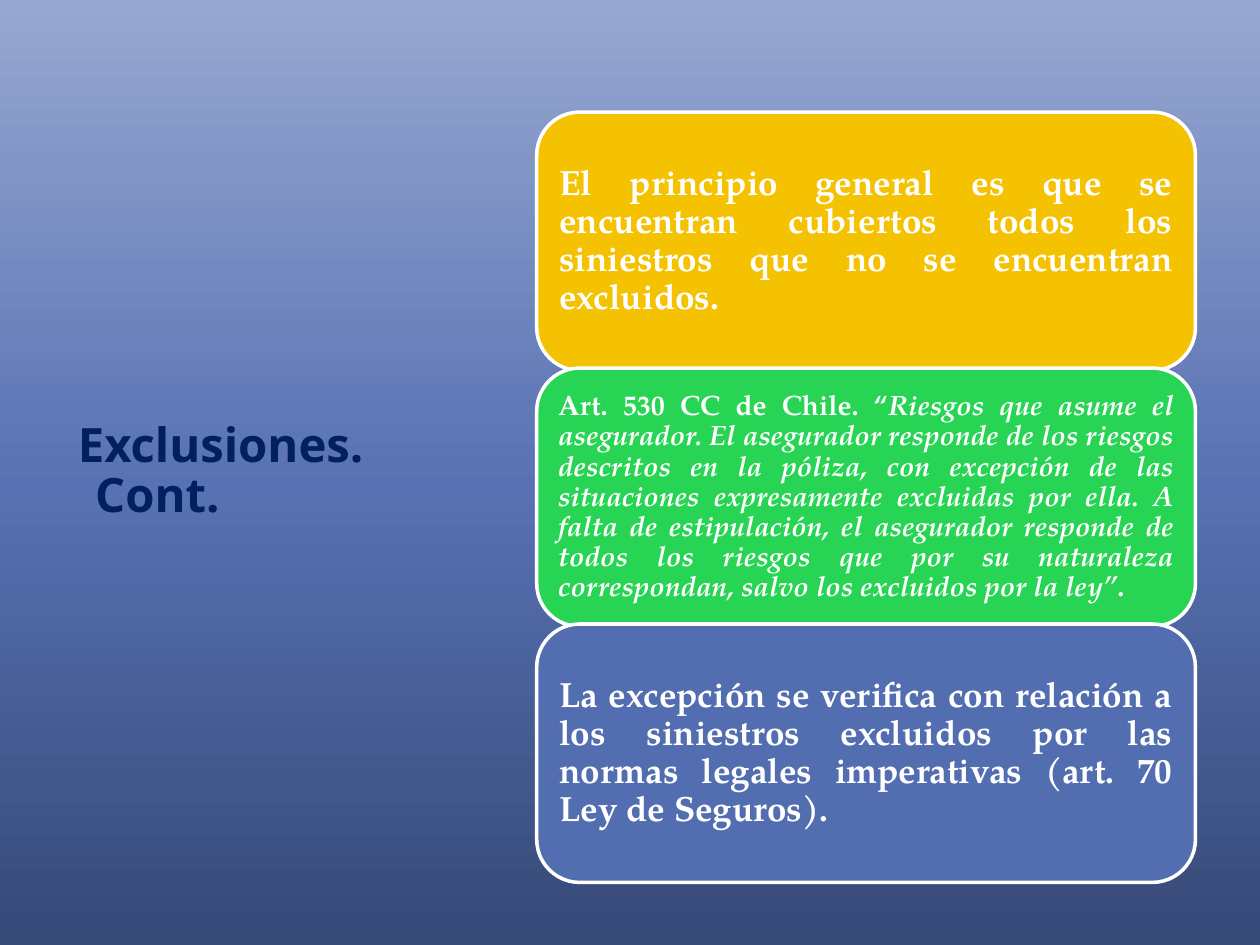
from copy import deepcopy
from pptx import Presentation
from pptx.dml.color import RGBColor
from pptx.enum.shapes import MSO_SHAPE as SHAPE
from pptx.enum.text import MSO_ANCHOR as ANCHOR, PP_ALIGN as ALIGN
from pptx.oxml.ns import qn
from pptx.util import Cm, Pt

WHITE = RGBColor(0xFF, 0xFF, 0xFF)
NAVY = RGBColor(0x00, 0x20, 0x60)
YELLOW = RGBColor(0xF5, 0xC2, 0x01)
GREEN = RGBColor(0x28, 0xD4, 0x53)
BLUE = RGBColor(0x52, 0x6D, 0xB0)
GRADIENT = [
    (0, RGBColor(0x36, 0x49, 0x77)),
    (0.48, RGBColor(0x57, 0x71, 0xB2)),
    (1, RGBColor(0x97, 0xA7, 0xD0)),
]

TITLE = "Exclusiones. Cont."
CARDS = [
    (YELLOW, 20, 0.2, [
        ("El principio general es que se encuentran cubiertos todos los "
         "siniestros que no se encuentran excluidos.", False),
    ]),
    (GREEN, 16, 0.18, [
        ("Art. 530 CC de Chile. “", False),
        ("Riesgos que asume el asegurador. El asegurador responde de los "
         "riesgos descritos en la póliza, con excepción de las situaciones "
         "expresamente excluidas por ella. A falta de estipulación, el "
         "asegurador responde de todos los riesgos que por su naturaleza "
         "correspondan, salvo los excluidos por la ley”", True),
        (".", False),
    ]),
    (BLUE, 20, 0.2, [
        ("La excepción se verifica con relación a los siniestros excluidos "
         "por las normas legales imperativas (art. 70 Ley de Seguros).", False),
    ]),
]
LEFT, TOP, WIDTH, HEIGHT, STEP = 10.82, 2.26, 13.28, 5.21, 5.16


def set_attrs(obj, values):
    for name, value in values.items():
        setattr(obj, name, value)


def add_run(p, text, size, font, color, italic=False):
    r = p.add_run()
    r.text = text
    set_attrs(r.font, {"size": Pt(size), "name": font, "bold": True, "italic": italic})
    r.font.color.rgb = color


def set_frame(tf, inset):
    set_attrs(tf, {"word_wrap": True, "vertical_anchor": ANCHOR.MIDDLE})
    for side in ("left", "top", "right", "bottom"):
        setattr(tf, f"margin_{side}", Cm(inset))


def add_background(s):
    fill = s.background.fill
    fill.gradient()
    fill.gradient_angle = 90
    stops = s.element.find(".//" + qn("a:gsLst"))
    stops.append(deepcopy(stops[0]))
    for stop, (position, color) in zip(fill.gradient_stops, GRADIENT):
        stop.position = position
        stop.color.rgb = color


def add_title(s):
    tf = s.shapes.add_textbox(Cm(0.5), Cm(2.92), Cm(8.03), Cm(13.21)).text_frame
    set_frame(tf, 0.25)
    p = tf.paragraphs[0]
    set_attrs(p, {"alignment": ALIGN.LEFT, "line_spacing": 0.88})
    props = p._p.get_or_add_pPr()
    props.set("marL", str(Cm(1.17)))
    props.set("indent", str(Cm(-0.35)))
    add_run(p, TITLE, 27, "Noto Sans", NAVY)


def add_card(s, index, color, size, inset, runs):
    sp = s.shapes.add_shape(SHAPE.ROUNDED_RECTANGLE, Cm(LEFT),
                            Cm(TOP + index * STEP), Cm(WIDTH), Cm(HEIGHT))
    sp.shadow.inherit = False
    sp.fill.solid()
    sp.fill.fore_color.rgb = color
    sp.line.color.rgb = WHITE
    sp.line.width = Pt(2)
    set_frame(sp.text_frame, inset)
    p = sp.text_frame.paragraphs[0]
    set_attrs(p, {"alignment": ALIGN.JUSTIFY, "line_spacing": 0.9})
    for text, italic in runs:
        add_run(p, text, size, "TeX Gyre Pagella", WHITE, italic)


def main():
    prs = Presentation()
    set_attrs(prs, {"slide_width": Cm(25.4), "slide_height": Cm(19.05)})
    s = prs.slides.add_slide(prs.slide_layouts[6])
    add_background(s)
    add_title(s)
    for index, card in enumerate(CARDS):
        add_card(s, index, *card)
    prs.save("out.pptx")


if __name__ == "__main__":
    main()
